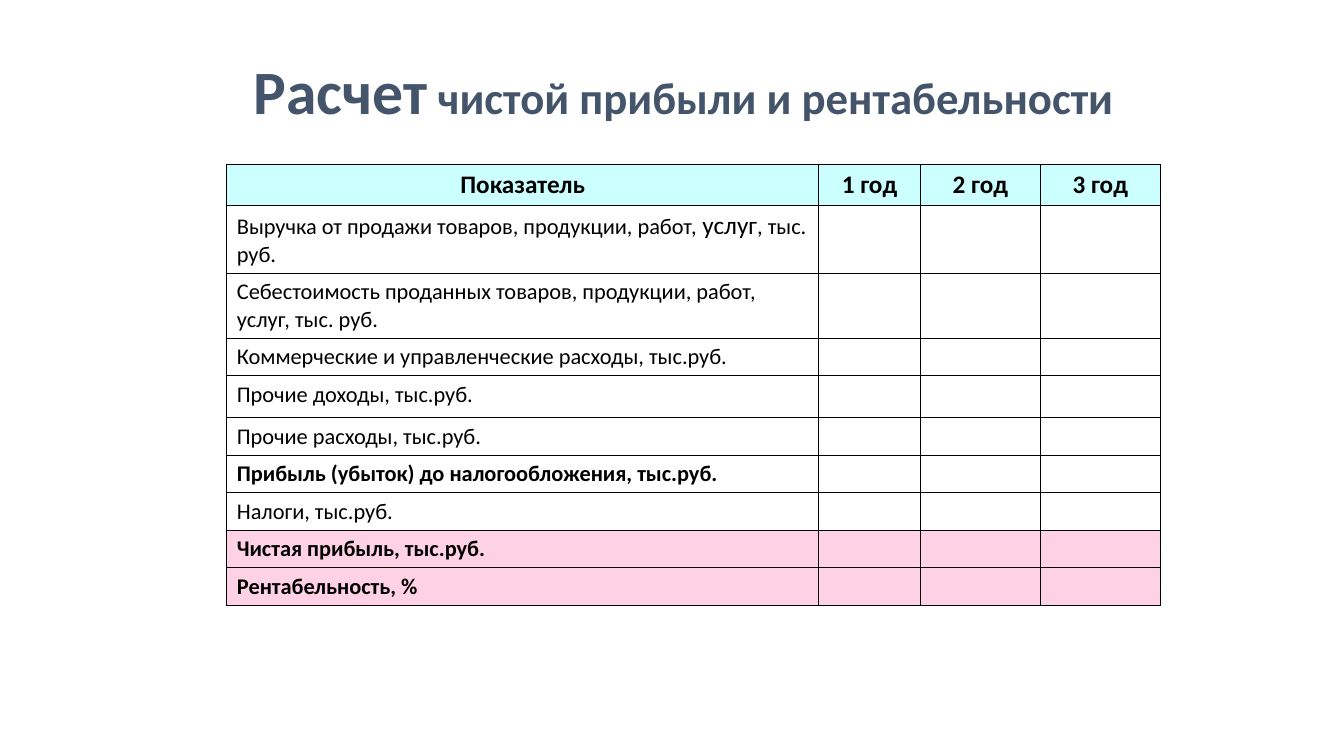
from lxml import etree
from pptx import Presentation
from pptx.dml.color import RGBColor
from pptx.enum import text
from pptx.oxml import ns
from pptx.util import Pt

FONT = "Calibri"
BLACK, WHITE, SLATE = "000000", "FFFFFF", "44546A"
CYAN, PINK = "CCFFFF", "FFD1E4"

TITLE = [("Расчет", 44), (" чистой прибыли и рентабельности", 32)]
HEADINGS = ["Показатель", "1 год", "2 год", "3 год"]
COLUMN_WIDTHS = [422.8, 72.6, 85.7, 85.7]
HEADING_HEIGHT = 29

# Runs of the label as (text, size), bold, fill, row height
INDICATORS = [
    ([("Выручка от продажи товаров, продукции, работ, ", 16), ("услуг", 18),
      (", тыс. руб.", 16)], False, WHITE, 45.5),
    ([("Себестоимость проданных товаров, продукции, работ, услуг, тыс. руб.", 16)],
     False, WHITE, 45.5),
    ([("Коммерческие и управленческие расходы, тыс.руб.", 16)], False, WHITE, 26.7),
    ([("Прочие доходы, тыс.руб.", 16)], False, WHITE, 30),
    ([("Прочие расходы, тыс.руб.", 16)], False, WHITE, 26.7),
    ([("Прибыль (убыток) до налогообложения, тыс.руб.", 16)], True, WHITE, 26.7),
    ([("Налоги, тыс.руб.", 16)], False, WHITE, 26.7),
    ([("Чистая прибыль, тыс.руб.", 16)], True, PINK, 26.7),
    ([("Рентабельность, %", 16)], True, PINK, 26.7),
]


def rgb(value):
    return RGBColor.from_string(value)


def write(paragraph, runs, color, bold, align):
    """Fill a paragraph with (text, size) runs that share one look."""
    paragraph.alignment = align
    font = paragraph.font
    font.name, font.bold, font.size = FONT, bold, Pt(runs[0][1])
    font.color.rgb = rgb(color)
    for words, size in runs:
        run = paragraph.add_run()
        run.text = words
        if size != runs[0][1]:
            run.font.size = Pt(size)


def add_borders(cell):
    properties = cell._tc.get_or_add_tcPr()
    for position, side in enumerate(("a:lnL", "a:lnR", "a:lnT", "a:lnB")):
        line = etree.Element(ns.qn(side), w=str(Pt(1)))
        fill = etree.SubElement(line, ns.qn("a:solidFill"))
        etree.SubElement(fill, ns.qn("a:srgbClr"), val=BLACK)
        properties.insert(position, line)


def format_cell(cell, fill, runs=None, bold=False, align=text.PP_ALIGN.LEFT):
    cell.fill.solid()
    cell.fill.fore_color.rgb = rgb(fill)
    add_borders(cell)
    paragraph = cell.text_frame.paragraphs[0]
    if runs:
        write(paragraph, runs, BLACK, bold, align)
    else:
        # An empty cell takes its line height from the end mark
        etree.SubElement(paragraph._p, ns.qn("a:endParaRPr"), sz="1600")


def add_title(slide):
    title = slide.shapes.title
    title.left, title.top = Pt(133.9), Pt(31.7)
    title.width, title.height = Pt(709.2), Pt(72)
    title.text_frame.vertical_anchor = text.MSO_ANCHOR.MIDDLE
    paragraph = title.text_frame.paragraphs[0]
    paragraph.line_spacing = 0.9
    write(paragraph, TITLE, SLATE, True, text.PP_ALIGN.CENTER)


def add_profit_table(slide):
    heights = [HEADING_HEIGHT] + [height for *_, height in INDICATORS]
    table = slide.shapes.add_table(
        len(heights), len(HEADINGS), Pt(162), Pt(117.4),
        Pt(sum(COLUMN_WIDTHS)), Pt(sum(heights))).table
    for column, width in zip(table.columns, COLUMN_WIDTHS):
        column.width = Pt(width)
    for row, height in zip(table.rows, heights):
        row.height = Pt(height)

    for column, heading in enumerate(HEADINGS):
        format_cell(table.cell(0, column), CYAN, [(heading, 18)], True,
                    text.PP_ALIGN.CENTER)
    for row, (label, bold, fill, _) in enumerate(INDICATORS, start=1):
        format_cell(table.cell(row, 0), fill, label, bold)
        for year in range(1, len(HEADINGS)):
            format_cell(table.cell(row, year), fill)


def main():
    presentation = Presentation()
    presentation.slide_width, presentation.slide_height = Pt(960), Pt(540)
    slide = presentation.slides.add_slide(presentation.slide_layouts[5])
    add_title(slide)
    add_profit_table(slide)
    presentation.save("out.pptx")


if __name__ == "__main__":
    main()
